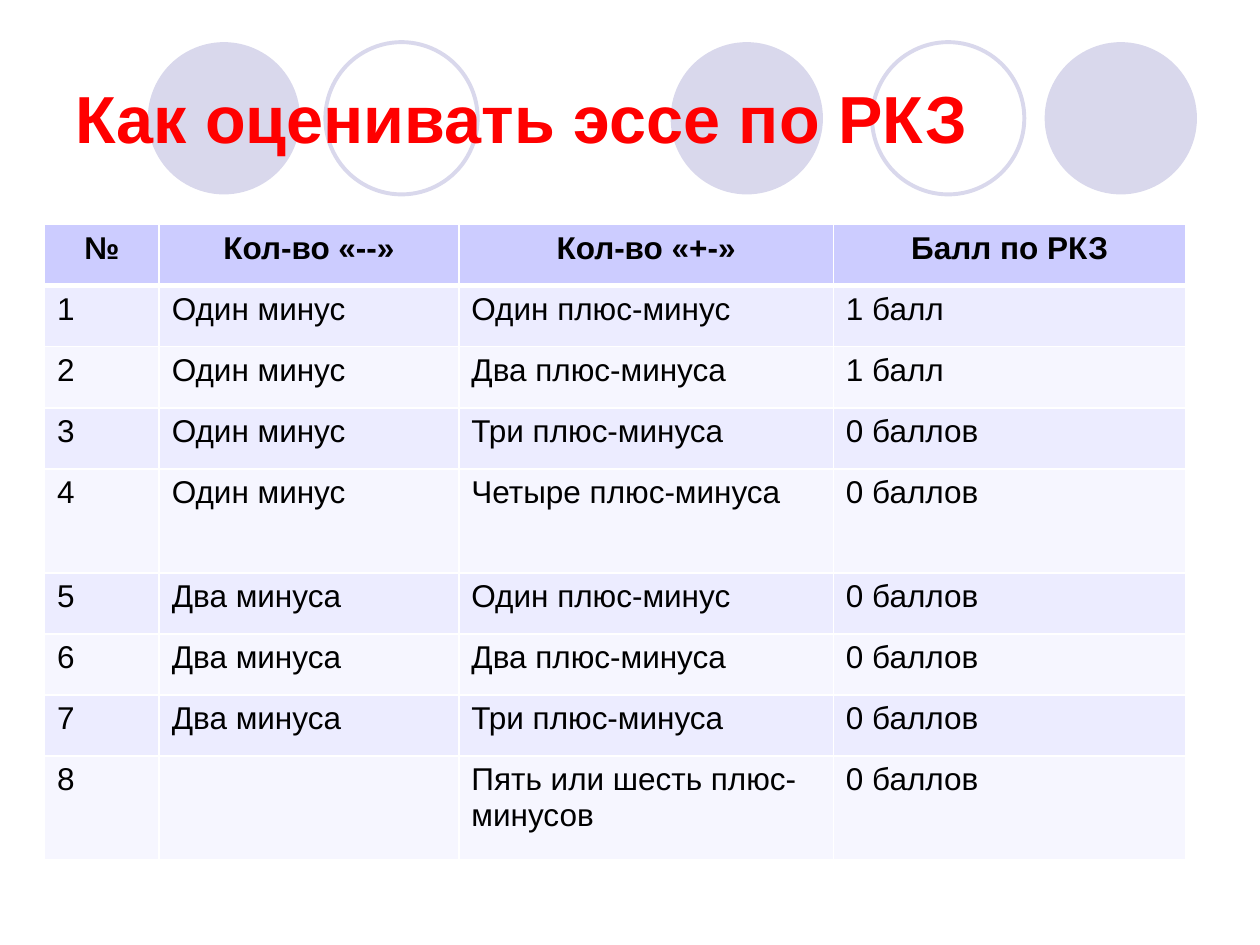
import pptx
import pptx.dml.color
import pptx.enum.shapes
import pptx.enum.text
import pptx.oxml
import pptx.oxml.ns
import pptx.util
from pptx.dml.color import RGBColor
from pptx.util import Cm

WHITE = RGBColor(0xFF, 0xFF, 0xFF)
BLACK = RGBColor(0x00, 0x00, 0x00)
RED = RGBColor(0xFF, 0x00, 0x00)
LAVENDER = RGBColor(0xD9, 0xD8, 0xEC)
HEADER = RGBColor(0xCC, 0xCC, 0xFF)
BANDS = (RGBColor(0xEC, 0xEC, 0xFF), RGBColor(0xF6, 0xF6, 0xFF))


class SlideBuilder:
    """Holds the text style and the current page."""

    font_name = "Arial"

    def __init__(self, page):
        self.page = page

    def style(self, para, size, color, bold=False):
        para.font.name = self.font_name
        para.font.size = pptx.util.Pt(size)
        para.font.bold = bold
        para.font.color.rgb = color

    def circle(self, left, top, diameter, filled):
        shape = self.page.shapes.add_shape(
            pptx.enum.shapes.MSO_SHAPE.OVAL,
            Cm(left), Cm(top), Cm(diameter), Cm(diameter))
        shape.shadow.inherit = False
        if filled:
            shape.fill.solid()
            shape.fill.fore_color.rgb = LAVENDER
            shape.line.fill.background()
        else:
            shape.fill.background()
            shape.line.color.rgb = LAVENDER
            shape.line.width = pptx.util.Pt(2.25)

    def title(self, text, left, top, width, height):
        box = self.page.shapes.add_textbox(Cm(left), Cm(top), Cm(width), Cm(height))
        frame = box.text_frame
        frame.word_wrap = True
        frame.vertical_anchor = pptx.enum.text.MSO_ANCHOR.MIDDLE
        para = frame.paragraphs[0]
        para.text = text
        self.style(para, 38, RED, bold=True)

    def border(self, cell, side, width):
        line = pptx.oxml.parse_xml(
            f'<a:ln{side} {pptx.oxml.ns.nsdecls("a")} w="{pptx.util.Pt(width)}">'
            f'<a:solidFill><a:srgbClr val="{WHITE}"/></a:solidFill></a:ln{side}>')
        cell._tc.get_or_add_tcPr().append(line)

    def table(self, rows, left, top, widths, heights):
        table = self.page.shapes.add_table(
            len(rows), len(widths), Cm(left), Cm(top),
            Cm(sum(widths)), Cm(sum(heights))).table
        for column, width in zip(table.columns, widths):
            column.width = Cm(width)
        for index, (texts, height) in enumerate(zip(rows, heights)):
            table.rows[index].height = Cm(height)
            is_header = index == 0
            for cell, text in zip(table.rows[index].cells, texts):
                para = cell.text_frame.paragraphs[0]
                if text:
                    para.text = text
                self.style(para, 18, BLACK, bold=is_header)
                if is_header:
                    para.alignment = pptx.enum.text.PP_ALIGN.CENTER
                # Borders come before the fill in the cell properties
                self.border(cell, "L", 1)
                self.border(cell, "R", 1)
                self.border(cell, "T", 3 if index == 1 else 1)
                self.border(cell, "B", 3 if is_header else 1)
                cell.fill.solid()
                cell.fill.fore_color.rgb = HEADER if is_header else BANDS[(index - 1) % 2]


def main():
    deck = pptx.Presentation()
    deck.slide_width, deck.slide_height = Cm(25.4), Cm(19.05)
    builder = SlideBuilder(deck.slides.add_slide(deck.slide_layouts[6]))

    # Row of circles behind the title
    for left, filled in ((13.52, True), (21.06, True), (2.98, True),
                         (17.58, False), (6.56, False)):
        builder.circle(left, 0.85, 3.07, filled)

    # Title
    builder.title("Как оценивать эссе по РКЗ", 1.27, 0.76, 22.86, 3.18)

    # Scoring table
    one, two = "Один минус", "Два минуса"
    zero = "0 баллов"
    scores = [
        (one, "Один плюс-минус", "1 балл"),
        (one, "Два плюс-минуса", "1 балл"),
        (one, "Три плюс-минуса", zero),
        (one, "Четыре плюс-минуса", zero),
        (two, "Один плюс-минус", zero),
        (two, "Два плюс-минуса", zero),
        (two, "Три плюс-минуса", zero),
        ("", "Пять или шесть плюс-минусов", zero),
    ]
    rows = [("№", "Кол-во «--»", "Кол-во «+-»", "Балл по РКЗ")]
    rows += [(str(number), *score) for number, score in enumerate(scores, 1)]
    tall_rows = (4, 8)
    heights = [2.1 if index in tall_rows else 1.23 for index in range(len(rows))]
    builder.table(rows, 0.9, 4.53, (2.31, 6.04, 7.55, 7.11), heights)

    deck.save("out.pptx")


if __name__ == "__main__":
    main()
